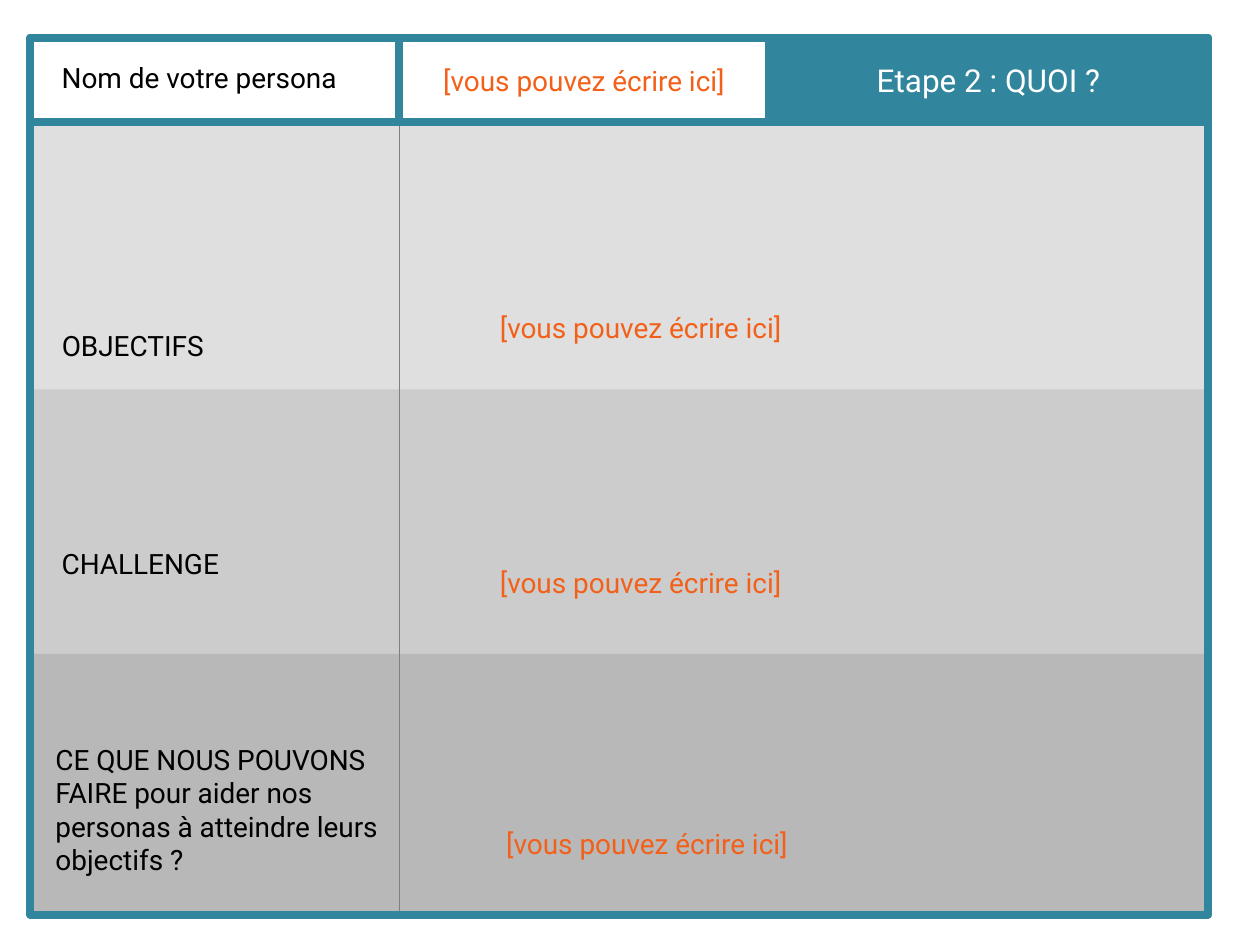
from lxml import etree
from pptx import Presentation
from pptx.dml.color import RGBColor
from pptx.enum.shapes import MSO_CONNECTOR, MSO_SHAPE
from pptx.enum.text import MSO_ANCHOR, MSO_AUTO_SIZE, PP_ALIGN
from pptx.oxml.ns import qn
from pptx.util import Inches, Pt

RECT = MSO_SHAPE.RECTANGLE
LINE = MSO_CONNECTOR.STRAIGHT
LEFT, CENTER = PP_ALIGN.LEFT, PP_ALIGN.CENTER
TOP, MIDDLE = MSO_ANCHOR.TOP, MSO_ANCHOR.MIDDLE
GROW = MSO_AUTO_SIZE.SHAPE_TO_FIT_TEXT

TEAL, ORANGE, BLACK, WHITE = "31859C", "F36019", "000000", "FFFFFF"
HINT = "[vous pouvez écrire ici]"

prs = Presentation()
prs.slide_width, prs.slide_height = Inches(10), Inches(7.5)
slide = prs.slides.add_slide(prs.slide_layouts[6])
shapes = slide.shapes
color = RGBColor.from_string


def box(x, y, w, h, fill=None, edge=None):
    shape = shapes.add_shape(RECT, Inches(x), Inches(y), Inches(w), Inches(h))
    shape.shadow.inherit = False
    if fill:
        shape.fill.solid()
        shape.fill.fore_color.rgb = color(fill)
    else:
        shape.fill.background()
    if edge:
        shape.line.color.rgb = color(edge)
        shape.line.width = Pt(4.5)
    else:
        shape.line.fill.background()


def label(text, x, y, w, h, ink=BLACK, size=16, center=False, wrap=True):
    frame = shapes.add_textbox(Inches(x), Inches(y), Inches(w), Inches(h)).text_frame
    frame.margin_left = frame.margin_right = Inches(0.05)
    frame.margin_top = frame.margin_bottom = Inches(0.05)
    frame.word_wrap = wrap
    frame.auto_size = GROW
    frame.vertical_anchor = MIDDLE if center else TOP
    frame.text = text
    para = frame.paragraphs[0]
    para.alignment = CENTER if center else LEFT
    font = para.runs[0].font
    font.name, font.size = "Roboto", Pt(size)
    font.color.rgb = color(ink)


# Grid of the frame
left, top, width, height = 0.24, 0.3, 9.35, 6.96
col, head = 2.93, 0.67
mid, last = left + col, left + 2 * col

# Grey bands
for y, h, fill in [(0.99, 2.15, "DFDFDF"), (3.09, 2.19, "CCCCCC"), (5.19, 2.05, "B8B8B8")]:
    box(left, y, width, h, fill)

# Column divider
rule = shapes.add_connector(LINE, Inches(mid), Inches(top + head),
                            Inches(mid), Inches(top + height))
rule.line.color.rgb = color("7F7F7F")
rule.line.width = Pt(0.25)
etree.SubElement(rule._element.spPr, qn("a:effectLst"))

# Row titles
label("OBJECTIFS", 0.44, 2.56, 1.28, 0.41, wrap=False)
label("CHALLENGE", 0.44, 4.29, 2.26, 0.41)
label("CE QUE NOUS POUVONS FAIRE pour aider nos personas à atteindre leurs objectifs ?",
      0.39, 5.84, 2.78, 1.32)

# Outer frame and header cells
box(left, top, width, height, edge=TEAL)
box(left, top, col, head, edge=TEAL)
box(last, top, left + width - last, head, TEAL, TEAL)
box(mid, top, col, head, edge=TEAL)

# Header texts
label("Nom de votre persona", 0.44, 0.43, 2.4, 0.41, wrap=False)
label("Etape 2 : QUOI ?", last, 0.41, left + width - last, 0.45, WHITE, 18, center=True)

# Prompts to fill in
for x, y in [(mid, 0.43), (3.62, 2.39), (3.62, 4.42), (3.67, 6.49)]:
    label(HINT, x, y, col, 0.41, ORANGE, center=True)

prs.save("out.pptx")
